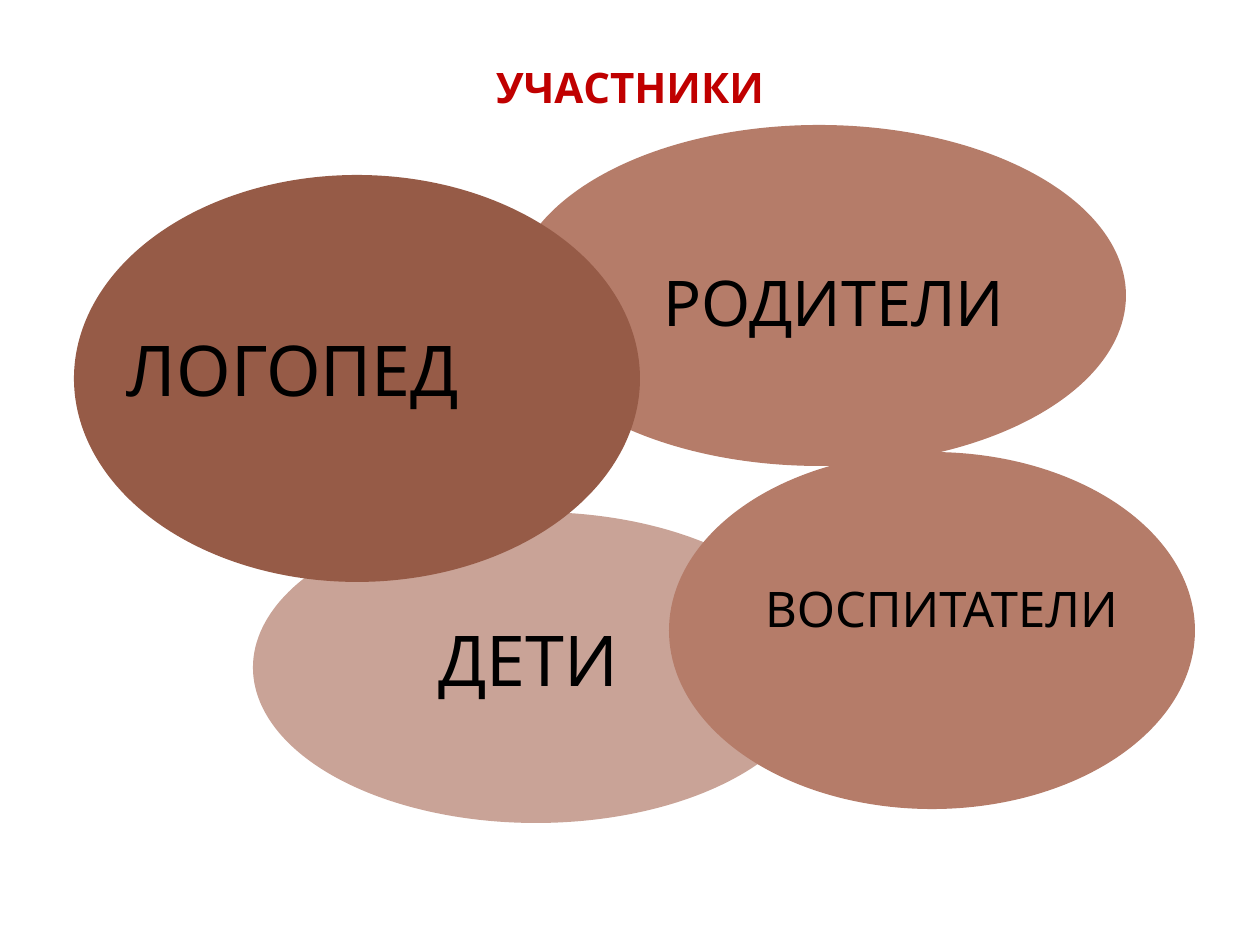
"""Build a slide of four overlapping ellipses naming the participants."""
from pptx import Presentation
from pptx.dml.color import RGBColor
from pptx.enum.shapes import MSO_SHAPE as Shape
from pptx.enum.text import MSO_ANCHOR as Anchor, PP_ALIGN as Align
from pptx.util import Emu, Pt

PX = 914400 // 126
FONT = "Cabin"
TITLE = ("УЧАСТНИКИ", (315, 55, 630, 63), 24, "C00000")
PARTICIPANTS = [
    ("ДЕТИ", (253, 512, 566, 311), "C9A397", (326, 581, 404, 165), 40, 0),
    ("ВОСПИТАТЕЛИ", (669, 452, 526, 357), "B57C69", (738, 507, 407, 209), 28, 0),
    ("РОДИТЕЛИ", (512, 125, 614, 341), "B57C69", (513, 207, 544, 199), 36, 98),
    ("ЛОГОПЕД", (74, 175, 566, 407), "965B47", (86, 280, 414, 188), 40, 0),
]


def px(*lengths):
    return [Emu(length * PX) for length in lengths]


def color(value):
    return RGBColor.from_string(value)


def add_label(page, text, place, size, ink):
    box = page.shapes.add_textbox(*px(*place))
    frame = box.text_frame
    frame.text = text
    frame.word_wrap = True
    para = frame.paragraphs[0]
    para.alignment = Align.CENTER
    font = para.runs[0].font
    font.name, font.size, font.color.rgb = FONT, Pt(size), color(ink)
    return frame


def add_participant(page, name, oval_place, fill, label_place, size, indent):
    oval = page.shapes.add_shape(Shape.OVAL, *px(*oval_place))
    oval.shadow.inherit = False
    oval.fill.solid()
    oval.fill.fore_color.rgb = color(fill)
    oval.line.fill.background()
    frame = add_label(page, name, label_place, size, "000000")
    frame.vertical_anchor = Anchor.MIDDLE
    frame.margin_left, frame.margin_top, frame.margin_right, frame.margin_bottom = px(indent, 0, 0, 0)
    frame.paragraphs[0].line_spacing = 0.9


def main():
    deck = Presentation()
    deck.slide_width, deck.slide_height = px(1260, 945)
    page = deck.slides.add_slide(deck.slide_layouts[6])
    title = add_label(page, *TITLE)
    title.paragraphs[0].runs[0].font.bold = True
    for participant in PARTICIPANTS:
        add_participant(page, *participant)
    deck.save("out.pptx")


if __name__ == "__main__":
    main()
